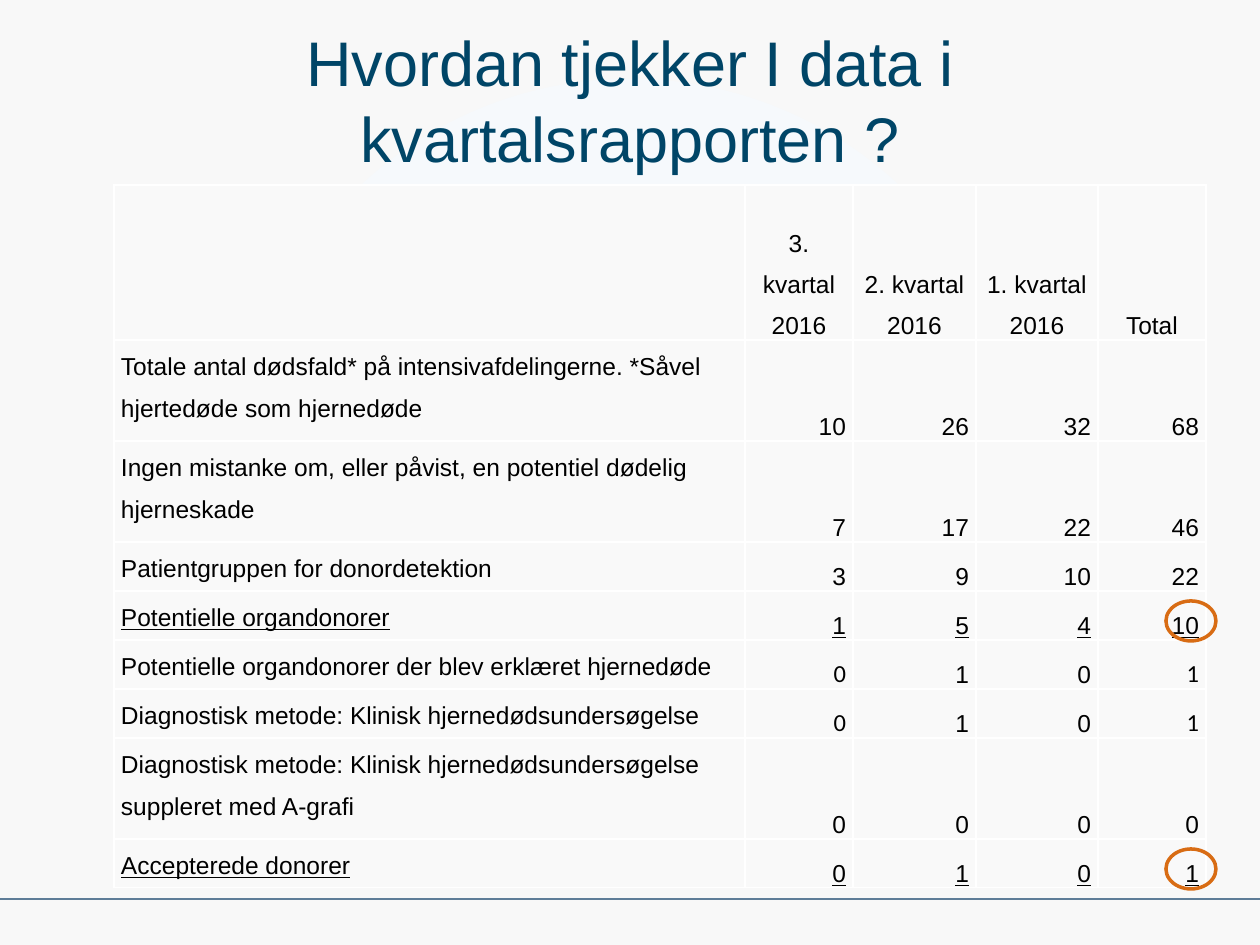
import pptx
import pptx.dml.color
import pptx.enum.shapes
import pptx.enum.text
import pptx.oxml
import pptx.oxml.ns
import pptx.util

COLORS = {
    "center": "F6F9FC", "edge": "F8F8F8", "title": "004567", "rule": "5E7D98",
    "cell": "F9F9F9", "border": "FFFFFF", "text": "000000", "mark": "D86C14",
}
ALIGN = pptx.enum.text.PP_ALIGN
ANCHOR = pptx.enum.text.MSO_ANCHOR
NS = pptx.oxml.ns.nsdecls("a")

COLUMN_WIDTHS = [631, 108, 123, 122, 108]
HEADINGS = ["", "3. kvartal 2016", "2. kvartal 2016", "1. kvartal 2016", "Total"]
ROWS = [
    ("Totale antal dødsfald* på intensivafdelingerne. *Såvel hjertedøde som hjernedøde", 10, 26, 32, 68),
    ("Ingen mistanke om, eller påvist, en potentiel dødelig hjerneskade", 7, 17, 22, 46),
    ("Patientgruppen for donordetektion", 3, 9, 10, 22),
    ("Potentielle organdonorer", 1, 5, 4, 10),
    ("Potentielle organdonorer der blev erklæret hjernedøde", 0, 1, 0, 1),
    ("Diagnostisk metode: Klinisk hjernedødsundersøgelse", 0, 1, 0, 1),
    ("Diagnostisk metode: Klinisk hjernedødsundersøgelse suppleret med A-grafi", 0, 0, 0, 0),
    ("Accepterede donorer", 0, 1, 0, 1),
]
ROW_HEIGHTS = [155, 101, 101, 49, 49, 49, 49, 101, 49]
UNDERLINED_ROWS = {4, 8}
CALIBRI_CELLS = {(row, column) for row in (5, 6) for column in (1, 4)}


def px(length):
    return round(length * 914400 / 126)


def rgb(name):
    return pptx.dml.color.RGBColor.from_string(COLORS[name])


def apply(target, values):
    for name, value in values.items():
        setattr(target, name, value)


class SlideBuilder:
    def __init__(self, slide):
        self.slide = slide
        self.cell_format = {
            "margin_left": px(7), "margin_right": px(7),
            "margin_top": 0, "margin_bottom": 0,
        }
        self.paragraph_format = {
            "line_spacing": 1.5,
            "space_before": pptx.util.Pt(4), "space_after": pptx.util.Pt(4),
        }

    def background(self):
        fill = self.slide.background.fill
        fill.gradient()
        for stop, name in zip(fill.gradient_stops, ("center", "edge")):
            stop.color.rgb = rgb(name)
        gradient = self.slide.element.xpath(".//p:bgPr/a:gradFill")[0]
        for linear in gradient.xpath("a:lin"):
            gradient.remove(linear)
        gradient.append(pptx.oxml.parse_xml(
            f'<a:path {NS} path="circle">'
            '<a:fillToRect l="50000" t="50000" r="50000" b="50000"/></a:path>'))

    def wording(self, paragraph, text, size, color, font="Arial", underline=None):
        paragraph.text = text
        apply(paragraph.font, {"name": font, "size": pptx.util.Pt(size), "underline": underline})
        paragraph.font.color.rgb = rgb(color)

    def title(self, text, left, top, width, height):
        heading = self.slide.shapes.add_textbox(px(left), px(top), px(width), px(height)).text_frame
        apply(heading, {"word_wrap": True, "vertical_anchor": ANCHOR.MIDDLE})
        heading.paragraphs[0].alignment = ALIGN.CENTER
        self.wording(heading.paragraphs[0], text, 36, "title")

    def rule(self, left, top, right):
        rule = self.slide.shapes.add_connector(
            pptx.enum.shapes.MSO_CONNECTOR.STRAIGHT, px(left), px(top), px(right), px(top))
        rule.line.color.rgb = rgb("rule")
        rule.line.width = pptx.util.Pt(1.5)
        rule.element.spPr.append(pptx.oxml.parse_xml(f"<a:effectLst {NS}/>"))

    def cell(self, cell, text, alignment, anchor, font, underline):
        apply(cell, {**self.cell_format, "vertical_anchor": anchor})
        properties = cell._tc.get_or_add_tcPr()
        for side in "LRTB":
            properties.append(pptx.oxml.parse_xml(
                f'<a:ln{side} {NS} w="12700"><a:solidFill>'
                f'<a:srgbClr val="{COLORS["border"]}"/></a:solidFill></a:ln{side}>'))
        cell.fill.solid()
        cell.fill.fore_color.rgb = rgb("cell")
        paragraph = cell.text_frame.paragraphs[0]
        apply(paragraph, {**self.paragraph_format, "alignment": alignment})
        self.wording(paragraph, text, 14, "text", font, underline)

    def table(self, left, top):
        content = [HEADINGS, *ROWS]
        table = self.slide.shapes.add_table(
            len(content), len(HEADINGS), px(left), px(top),
            px(sum(COLUMN_WIDTHS)), px(sum(ROW_HEIGHTS))).table
        for column, width in zip(table.columns, COLUMN_WIDTHS):
            column.width = px(width)
        for row, height in zip(table.rows, ROW_HEIGHTS):
            row.height = px(height)
        for r, values in enumerate(content):
            for c, value in enumerate(values):
                alignment = ALIGN.CENTER if r == 0 else ALIGN.RIGHT if c else ALIGN.LEFT
                self.cell(
                    table.cell(r, c), str(value), alignment,
                    ANCHOR.BOTTOM if c else ANCHOR.TOP,
                    "Calibri" if (r, c) in CALIBRI_CELLS else "Arial",
                    True if r in UNDERLINED_ROWS else None)

    def ring(self, left, top, width, height):
        ring = self.slide.shapes.add_shape(
            pptx.enum.shapes.MSO_SHAPE.OVAL, px(left), px(top), px(width), px(height))
        ring.shadow.inherit = False
        ring.fill.background()
        ring.line.color.rgb = rgb("mark")
        ring.line.width = pptx.util.Pt(2)


def main():
    deck = pptx.Presentation()
    apply(deck, {"slide_width": px(1260), "slide_height": px(945)})
    builder = SlideBuilder(deck.slides.add_slide(deck.slide_layouts[6]))
    builder.background()
    builder.rule(0, 899, 1260)
    builder.title("Hvordan tjekker I data i kvartalsrapporten ?", 63, -24, 1134, 246)
    builder.table(114, 185)
    for top in (601, 849):
        builder.ring(1166, top, 50, 40)
    deck.save("out.pptx")


if __name__ == "__main__":
    main()
